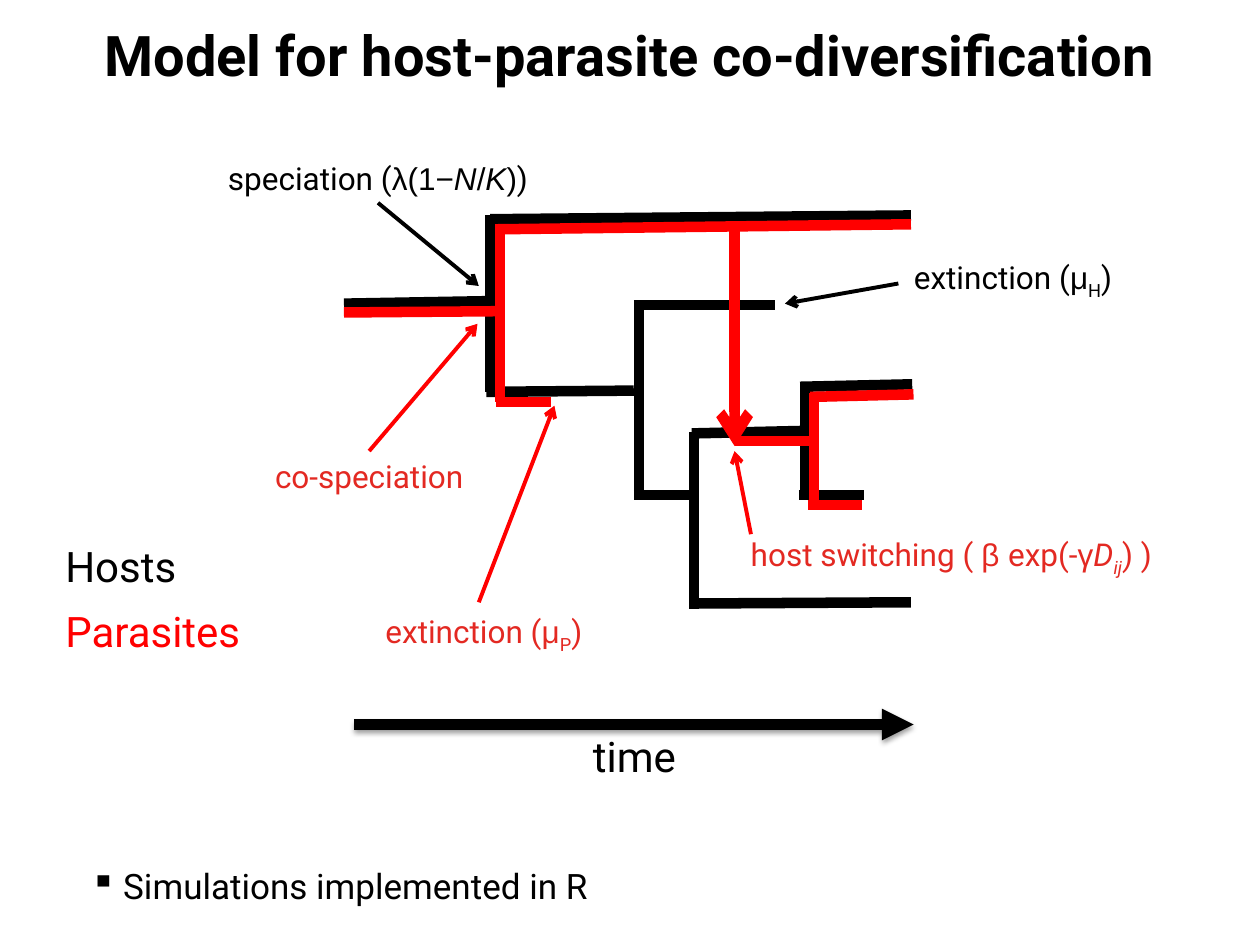
"""Build a slide on a model for host-parasite co-diversification."""
from lxml import etree
from pptx import Presentation
from pptx.dml.color import RGBColor
from pptx.enum.shapes import MSO_CONNECTOR
from pptx.enum.text import MSO_ANCHOR, MSO_AUTO_SIZE, PP_ALIGN
from pptx.oxml import parse_xml
from pptx.oxml.ns import qn
from pptx.util import Inches, Pt

STRAIGHT = MSO_CONNECTOR.STRAIGHT
TOP, MIDDLE = MSO_ANCHOR.TOP, MSO_ANCHOR.MIDDLE
GROW, FIXED = MSO_AUTO_SIZE.SHAPE_TO_FIT_TEXT, MSO_AUTO_SIZE.NONE
LEFT, CENTER = PP_ALIGN.LEFT, PP_ALIGN.CENTER

COLORS = {"black": "000000", "red": "FF0000", "label": "E32922"}
SHADE = (
    '<a:effectLst xmlns:a="http://schemas.openxmlformats.org/drawingml/2006/main">'
    '<a:outerShdw blurRad="39370" dist="20320" dir="5400000" rotWithShape="0">'
    '<a:srgbClr val="000000"><a:alpha val="38000"/></a:srgbClr>'
    '</a:outerShdw></a:effectLst>'
)

HOSTS = [
    (2.73, 2.41, 3.89, 2.39), (3.89, 3.11, 3.89, 1.71),
    (3.89, 1.74, 7.23, 1.71), (3.86, 3.11, 5.03, 3.1),
    (5.07, 3.93, 5.07, 2.39), (5.03, 3.93, 5.51, 3.93),
    (5.03, 2.42, 6.15, 2.42), (5.51, 4.83, 5.51, 3.43),
    (5.49, 3.44, 6.39, 3.42), (5.51, 4.79, 7.23, 4.78),
    (6.39, 3.93, 6.39, 3.04), (6.35, 3.07, 7.24, 3.05),
    (6.34, 3.93, 6.86, 3.93),
]
PARASITES = [
    (2.73, 2.48, 3.97, 2.47), (3.97, 3.19, 3.97, 1.78),
    (3.94, 1.82, 7.23, 1.78), (3.94, 3.19, 4.37, 3.19),
    (5.83, 3.5, 6.46, 3.5), (6.46, 4.01, 6.46, 3.12),
    (6.43, 3.15, 7.25, 3.13), (6.41, 4.01, 6.84, 4.01),
]


def span(text, font="Roboto", italic=False, base=0):
    """Return a piece of text with its format."""
    return text, font, italic, base


def greek(text, italic=False):
    """Return a piece of text set in Arial."""
    return span(text, font="Arial", italic=italic)


class Board:
    """Hold the style and the current slide."""

    def __init__(self, slide):
        """Start drawing on the slide."""
        self.slide = slide
        self.shapes = slide.shapes

    def group(self):
        """Draw what follows in a new group."""
        self.shapes = self.slide.shapes.add_group_shape().shapes

    def ungroup(self):
        """Draw what follows straight on the slide."""
        self.shapes = self.slide.shapes

    def line(self, ends, color="black", width=6, tip=None, shade=False):
        """Draw a line, with an arrowhead at its end if a tip is named."""
        link = self.shapes.add_connector(STRAIGHT, *map(Inches, ends))
        link.line.color.rgb = RGBColor.from_string(COLORS[color])
        link.line.width = Pt(width)
        if tip:
            etree.SubElement(link.line._get_or_add_ln(), qn("a:tailEnd"), type=tip)
        props = link._element.spPr
        if shade:
            props.append(parse_xml(SHADE))
        else:
            etree.SubElement(props, qn("a:effectLst"))

    def arrow(self, ends, color="black"):
        """Draw a thin pointer."""
        self.line(ends, color, 2.25, "arrow")

    def text(self, box, spans, size=18, color="black", bold=False, align=CENTER,
             anchor=TOP, fit=FIXED, before=0):
        """Write one paragraph in a text box and return it."""
        frame = self.shapes.add_textbox(*map(Inches, box)).text_frame
        frame.word_wrap = True
        frame.auto_size = fit
        frame.vertical_anchor = anchor
        para = frame.paragraphs[0]
        para.alignment = align
        para.space_before = Pt(before)
        for words, font, italic, base in spans:
            run = para.add_run()
            run.text = words
            run.font.name = font
            run.font.size = Pt(size)
            run.font.bold = bold
            run.font.italic = italic
            run.font.color.rgb = RGBColor.from_string(COLORS[color])
            if base:
                run.font._element.set("baseline", str(base * 1000))
        return para

    def label(self, box, spans, color="black"):
        """Write a label for an event."""
        self.text(box, spans, color=color, fit=GROW)

    def key(self, box, word, color="black", align=LEFT):
        """Write a large word."""
        self.text(box, [span(word)], 24, color, align=align, before=4.8)

    def bullet(self, box, words):
        """Write a bullet point."""
        para = self.text(box, [span(words)], 20, align=LEFT, fit=GROW, before=11)
        para.line_spacing = 1.1
        props = para._p.get_or_add_pPr()
        props.set("marL", str(Inches(0.61)))
        props.set("indent", str(Inches(-0.26)))
        etree.SubElement(props, qn("a:buChar"), char="▪")


def main():
    """Build and save the slide."""
    deck = Presentation()
    deck.slide_width, deck.slide_height = Inches(10), Inches(7.5)
    board = Board(deck.slides.add_slide(deck.slide_layouts[6]))

    board.text((0, -0.06, 10, 0.98), [span("Model for host-parasite co-diversification")],
               size=32, bold=True, anchor=MIDDLE)

    for color, tree in (("black", HOSTS), ("red", PARASITES)):
        board.group()
        for ends in tree:
            board.line(ends, color)
    board.line((5.83, 1.79, 5.83, 3.54), "red", tip="arrow")
    board.ungroup()

    board.key((0.42, 4.24, 1.59, 0.54), "Hosts")
    board.key((0.42, 4.76, 1.9, 0.54), "Parasites", "red")
    board.line((2.81, 5.75, 7.25, 5.75), tip="triangle", shade=True)
    board.key((2.81, 5.75, 4.45, 0.54), "time", align=CENTER)

    board.label((1.63, 1.21, 2.74, 0.4), [
        span("speciation ("), greek("λ(1−"), greek("Ν", italic=True), greek("/"),
        greek("Κ", italic=True), greek(")"), span(")")])
    board.arrow((3, 1.61, 3.8, 2.27))

    def loss(mark):
        return [span("extinction ("), greek("μ"), span(mark, base=-25), span(")")]

    board.label((6.95, 2, 2.18, 0.4), loss("H"))
    board.arrow((7.13, 2.25, 6.23, 2.41))

    board.group()
    board.label((1.84, 3.58, 2.18, 0.4), [span("co-speciation")], "label")
    board.arrow((2.93, 3.58, 3.79, 2.57), "red")
    board.arrow((3.8, 4.78, 4.4, 3.22), "red")
    board.label((2.75, 4.81, 2.18, 0.4), loss("P"), "label")
    board.arrow((5.96, 4.24, 5.83, 3.58), "red")
    board.label((5.67, 4.2, 3.76, 0.4), [
        span("host switching ( "), greek("β "), span("exp(-"), greek("γ"),
        span("D", italic=True), span("ij", italic=True, base=-25), span(") )")], "label")
    board.ungroup()

    board.bullet((0.27, 6.78, 6.64, 0.47), "Simulations implemented in R")
    deck.save("out.pptx")


if __name__ == "__main__":
    main()
